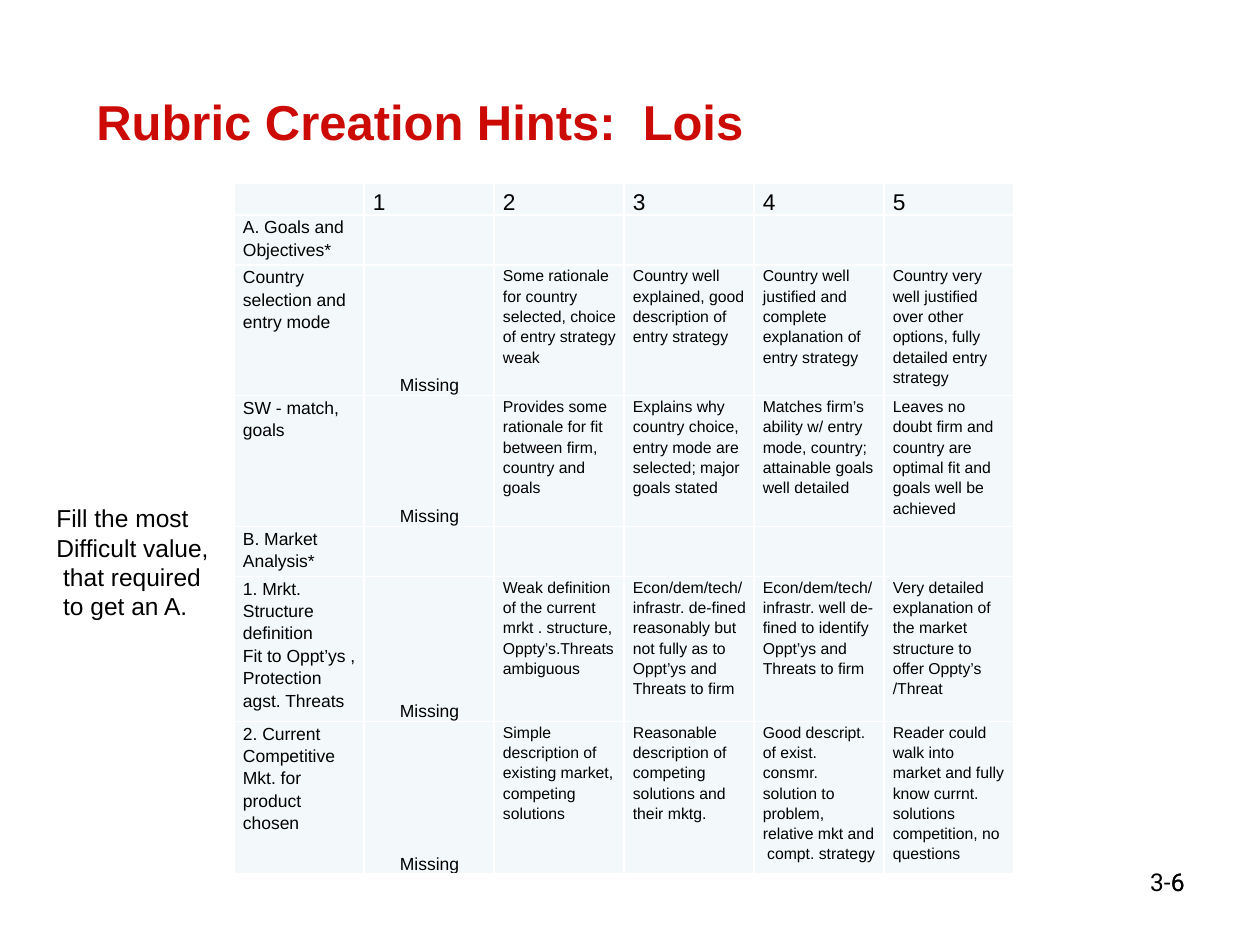
from dataclasses import dataclass

from lxml.etree import SubElement
from pptx import Presentation
from pptx.dml.color import RGBColor
from pptx.enum.text import MSO_ANCHOR, PP_ALIGN
from pptx.oxml.ns import qn
from pptx.util import Emu, Pt

PX = 914400 / 126


def px(length):
    return Emu(round(length * PX))


@dataclass(frozen=True)
class Theme:
    ink: str = "000000"
    title: str = "CC0B06"
    cell: str = "F3F9FA"
    border: str = "FFFFFF"
    font: str = "Arial"
    number_font: str = "Roboto"
    title_size: int = 28
    body_size: int = 14
    header_size: int = 13
    label_size: int = 10
    detail_size: int = 9


class SlideBuilder:
    def __init__(self, slide, theme):
        self.slide = slide
        self.theme = theme

    def add_run(self, paragraph, text, size, color=None, font=None, bold=False):
        run = paragraph.add_run()
        run.text = text
        run.font.size = Pt(size)
        run.font.name = font or self.theme.font
        run.font.bold = bold
        run.font.color.rgb = RGBColor.from_string(color or self.theme.ink)

    def add_text(self, box, lines, size, align=PP_ALIGN.LEFT,
                 anchor=MSO_ANCHOR.TOP, wrap=True, **style):
        shape = self.slide.shapes.add_textbox(*map(px, box))
        frame = shape.text_frame
        frame.word_wrap = wrap
        frame.vertical_anchor = anchor
        for index, line in enumerate(lines):
            paragraph = frame.add_paragraph() if index else frame.paragraphs[0]
            paragraph.alignment = align
            self.add_run(paragraph, line, size, **style)

    def add_cell_borders(self, cell):
        properties = cell._tc.get_or_add_tcPr()
        for side in ("lnL", "lnR", "lnT", "lnB"):
            line = SubElement(properties, qn(f"a:{side}"), w=str(Pt(1)))
            fill = SubElement(line, qn("a:solidFill"))
            SubElement(fill, qn("a:srgbClr"), val=self.theme.border)

    def fill_cell(self, cell, text, size, anchor, align):
        cell.margin_left = px(9)
        cell.margin_right = px(8)
        cell.margin_top = cell.margin_bottom = 0
        cell.vertical_anchor = anchor
        self.add_cell_borders(cell)
        cell.fill.solid()
        cell.fill.fore_color.rgb = RGBColor.from_string(self.theme.cell)
        frame = cell.text_frame
        if not text:
            # Keep an empty cell from stretching its row
            SubElement(frame.paragraphs[0]._p, qn("a:endParaRPr"), sz=str(size * 100))
            return
        for index, block in enumerate(text.split("\n")):
            paragraph = frame.add_paragraph() if index else frame.paragraphs[0]
            paragraph.alignment = align
            paragraph.line_spacing = 1.15
            paragraph.space_before = paragraph.space_after = 0
            for part_index, part in enumerate(block.split("\v")):
                if part_index:
                    paragraph.add_line_break()
                self.add_run(paragraph, part, size)

    def add_rubric(self, left, top, column_width, row_heights, rows):
        theme = self.theme
        columns = len(rows[0])
        table = self.slide.shapes.add_table(
            len(rows), columns, px(left), px(top),
            px(column_width * columns), px(sum(row_heights))).table
        table.first_row = table.horz_banding = False
        for column in table.columns:
            column.width = px(column_width)
        for row_index, (height, texts) in enumerate(zip(row_heights, rows)):
            table.rows[row_index].height = px(height)
            for column_index in range(columns):
                text = texts[column_index] if column_index < len(texts) else ""
                size, anchor, align = theme.detail_size, MSO_ANCHOR.TOP, PP_ALIGN.LEFT
                if row_index == 0:
                    size, anchor = theme.header_size, MSO_ANCHOR.BOTTOM
                elif column_index == 0:
                    size = theme.label_size
                elif column_index == 1:
                    size, anchor, align = theme.label_size, MSO_ANCHOR.BOTTOM, PP_ALIGN.CENTER
                self.fill_cell(table.cell(row_index, column_index), text, size, anchor, align)


# Rubric content: label, then one text per score; section rows have only a label
RUBRIC = [
    ["", "1", "2", "3", "4", "5"],
    ["A. Goals and Objectives*"],
    ["Country selection and entry mode", "Missing",
     "Some rationale for country selected, choice of entry strategy weak",
     "Country well explained, good description of entry strategy",
     "Country well justified and complete explanation of entry strategy",
     "Country very well justified over other options, fully detailed entry strategy"],
    ["SW - match, goals", "Missing",
     "Provides some rationale for fit between firm, country and goals",
     "Explains why country choice, entry mode are selected; major  goals stated",
     "Matches firm’s ability w/ entry mode, country; attainable goals well detailed",
     "Leaves no doubt firm and country are optimal fit and goals well be achieved"],
    ["B. Market Analysis*"],
    ["1. Mrkt. Structure definition\nFit to Oppt’ys , Protection agst. Threats", "Missing",
     "Weak definition of the current mrkt . structure, Oppty’s.Threats\vambiguous",
     "Econ/dem/tech/ infrastr. de-fined reasonably but not fully as to Oppt’ys and Threats to firm",
     "Econ/dem/tech/ infrastr. well de-fined to identify Oppt’ys and Threats to firm",
     "Very detailed explanation of the market structure to offer Oppty’s /Threat"],
    ["2. Current Competitive Mkt. for product chosen", "Missing",
     "Simple description of  existing market, competing solutions",
     "Reasonable description of competing solutions and their mktg.",
     "Good descript. of exist. consmr. solution to problem, relative mkt and  compt. strategy",
     "Reader could walk into market and fully know currnt. solutions competition, no questions"],
]
ROW_HEIGHTS = [32, 50, 125, 121, 50, 139, 142]


def main():
    presentation = Presentation()
    presentation.slide_width = px(1260)
    presentation.slide_height = px(945)
    slide = presentation.slides.add_slide(presentation.slide_layouts[6])
    theme = Theme()
    builder = SlideBuilder(slide, theme)

    # Page number: chapter-page text with the page digit over it
    for number in ("3-6", "6"):
        builder.add_text((903, 861, 294, 66), [number], theme.body_size,
                         align=PP_ALIGN.RIGHT, font=theme.number_font)

    # Title
    builder.add_text((84, 73, 861, 95), ["Rubric Creation Hints:  Lois"],
                     theme.title_size, anchor=MSO_ANCHOR.MIDDLE,
                     color=theme.title, bold=True)

    # Rubric table
    builder.add_rubric(234, 183, 130, ROW_HEIGHTS, RUBRIC)

    # Side note
    builder.add_text((44, 497, 204, 131),
                     ["Fill the most", "Difficult value,", " that required", " to get an A."],
                     theme.body_size, wrap=False)

    presentation.save("out.pptx")


if __name__ == "__main__":
    main()
